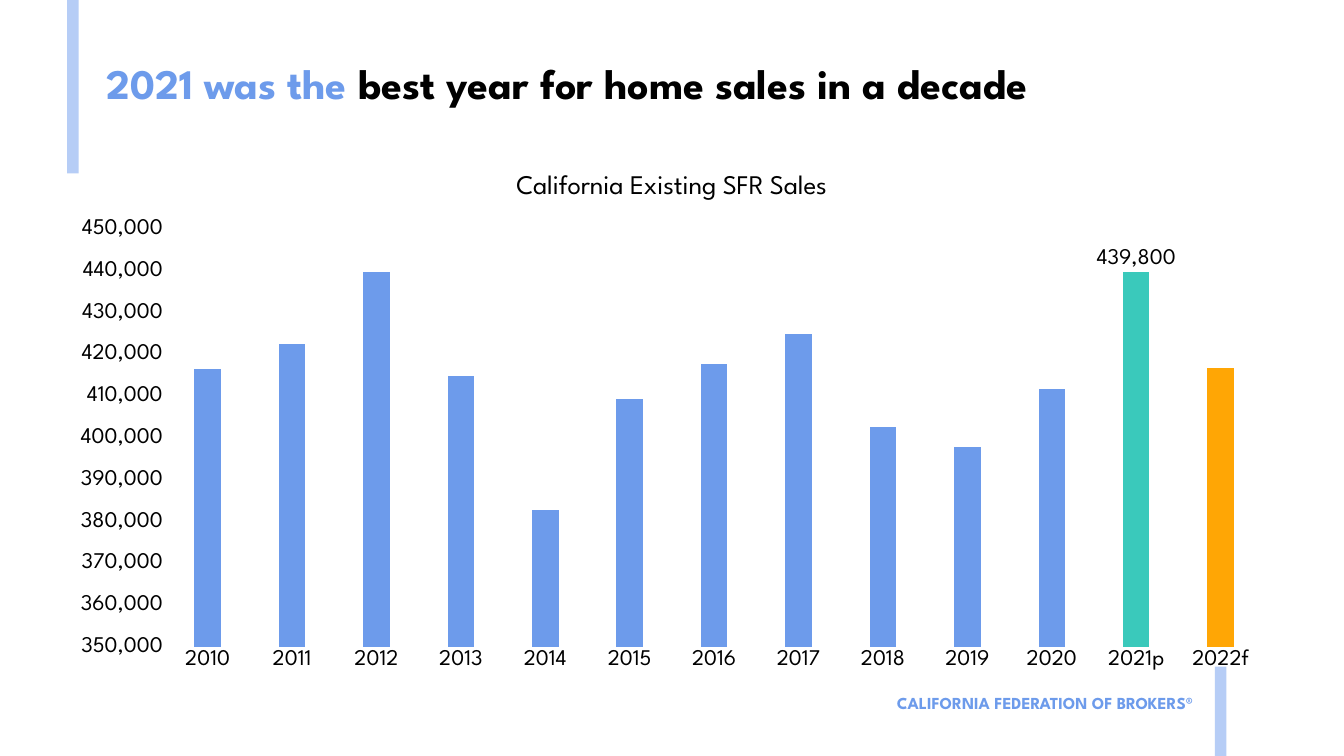
from lxml import etree
from pptx import Presentation
from pptx import util as u
from pptx.chart.data import CategoryChartData
from pptx.dml.color import RGBColor
from pptx.enum import chart as charts, shapes, text
from pptx.oxml.ns import qn

WIDTH, HEIGHT = 20, 11.25
COLORS = {"blue": "6D9BEB", "pale": "B6CDF6", "teal": "3AC9BB",
          "orange": "FFA605", "black": "000000", "white": "FFFFFF"}
SALES = {"2010": 416520, "2011": 422550, "2012": 439790, "2013": 414900,
         "2014": 382720, "2015": 409410, "2016": 417720, "2017": 424890,
         "2018": 402640, "2019": 397960, "2020": 411870,
         "2021p": 439800, "2022f": 416800}
HIGHLIGHTS = {"2021p": "teal", "2022f": "orange"}
LABELLED_YEAR = "2021p"


class SlideBuilder:
    """Holds the style and the slide; lengths are inches on a 20 x 11.25 page."""

    font_name = "League Spartan"

    def __init__(self, slide):
        self.slide = slide

    def color(self, name):
        return RGBColor.from_string(COLORS[name])

    def box(self, left, top, width, height):
        return [u.Inches(length) for length in (left, top, width, height)]

    def style(self, font, size, color="black", bold=False):
        font.name, font.size, font.bold = self.font_name, u.Pt(size), bold
        font.color.rgb = self.color(color)

    def fill(self, fill_format, color):
        fill_format.solid()
        fill_format.fore_color.rgb = self.color(color)

    def bar(self, left, top):
        shape = self.slide.shapes.add_shape(
            shapes.MSO_SHAPE.RECTANGLE, *self.box(left, top, 0.17, 7.12))
        shape.shadow.inherit = False
        self.fill(shape.fill, "pale")
        shape.line.fill.background()

    def text(self, area, parts, size, align=text.PP_ALIGN.LEFT, spacing=1.0):
        frame = self.slide.shapes.add_textbox(*self.box(*area)).text_frame
        frame.word_wrap = True
        frame.vertical_anchor = text.MSO_ANCHOR.MIDDLE
        paragraph = frame.paragraphs[0]
        paragraph.alignment, paragraph.line_spacing = align, spacing
        for words, color in parts:
            run = paragraph.add_run()
            run.text = words
            self.style(run.font, size, color, bold=True)

    def column_chart(self, area, title, values):
        data = CategoryChartData(number_format="#,##0")
        data.categories = list(values)
        data.add_series("Series 1", list(values.values()))
        chart = self.slide.shapes.add_chart(
            charts.XL_CHART_TYPE.COLUMN_CLUSTERED, *self.box(*area), data).chart
        self.style(chart.font, 24)
        chart.has_legend = False
        chart.has_title = True
        heading = chart.chart_title.text_frame.paragraphs[0]
        heading.text = title
        self.style(heading.font, 28.8)
        self.style_axes(chart)
        self.style_columns(chart.plots[0], list(values))
        self.place_plot(chart, x=0.089, y=0.143, w=0.891, h=0.795)

    def style_axes(self, chart):
        for axis in (chart.category_axis, chart.value_axis):
            axis.major_tick_mark = axis.minor_tick_mark = charts.XL_TICK_MARK.NONE
            self.style(axis.tick_labels.font, 24)
        years, sales = chart.category_axis, chart.value_axis
        sales.minimum_scale, sales.maximum_scale = 350000, 450000
        sales.major_unit = 10000
        sales.tick_labels.number_format = "#,##0"
        sales.tick_labels.number_format_is_linked = False
        sales.format.line.fill.background()
        for line in (years.format.line, sales.major_gridlines.format.line):
            line.color.rgb = self.color("white")
            line.width = u.Pt(0.75)

    def style_columns(self, plot, years):
        plot.gap_width, plot.overlap = 219, -27
        plot.vary_by_categories = False
        series = plot.series[0]
        series.invert_if_negative = False
        self.fill(series.format.fill, "blue")
        for year, color in HIGHLIGHTS.items():
            self.fill(series.points[years.index(year)].format.fill, color)
        label = series.points[years.index(LABELLED_YEAR)].data_label
        self.style(label.font, 24)
        label.position = charts.XL_LABEL_POSITION.OUTSIDE_END

    def place_plot(self, chart, **shares):
        """Fix the inner plot area, given as shares of the chart's size."""
        plot_area = chart.plots[0]._element.getparent()
        for old in plot_area.findall(qn("c:layout")):
            plot_area.remove(old)
        layout = etree.Element(qn("c:layout"))
        plot_area.insert(0, layout)
        manual = etree.SubElement(layout, qn("c:manualLayout"))
        settings = {"layoutTarget": "inner", "xMode": "edge", "yMode": "edge", **shares}
        for name, value in settings.items():
            etree.SubElement(manual, qn(f"c:{name}"), val=str(value))


def main():
    presentation = Presentation()
    presentation.slide_width = u.Inches(WIDTH)
    presentation.slide_height = u.Inches(HEIGHT)
    builder = SlideBuilder(presentation.slides.add_slide(presentation.slide_layouts[6]))

    # Accent bars running over the top and bottom edges
    builder.bar(1, -4.54)
    builder.bar(18.08, 9.92)

    # Footer and title
    builder.text((12.67, 10.26, 5.25, 0.4),
                 [("CALIFORNIA FEDERATION OF BROKERS® ", "blue")],
                 18, align=text.PP_ALIGN.RIGHT)
    builder.text((1.49, 0.89, 17.43, 0.78),
                 [("2021 was the ", "blue"),
                  ("best year for home sales in a decade", "black")],
                 45, spacing=0.9)

    # Sales by year
    builder.column_chart((0.83, 2.29, 18.33, 7.83),
                         "California Existing SFR Sales", SALES)

    presentation.save("out.pptx")


if __name__ == "__main__":
    main()
